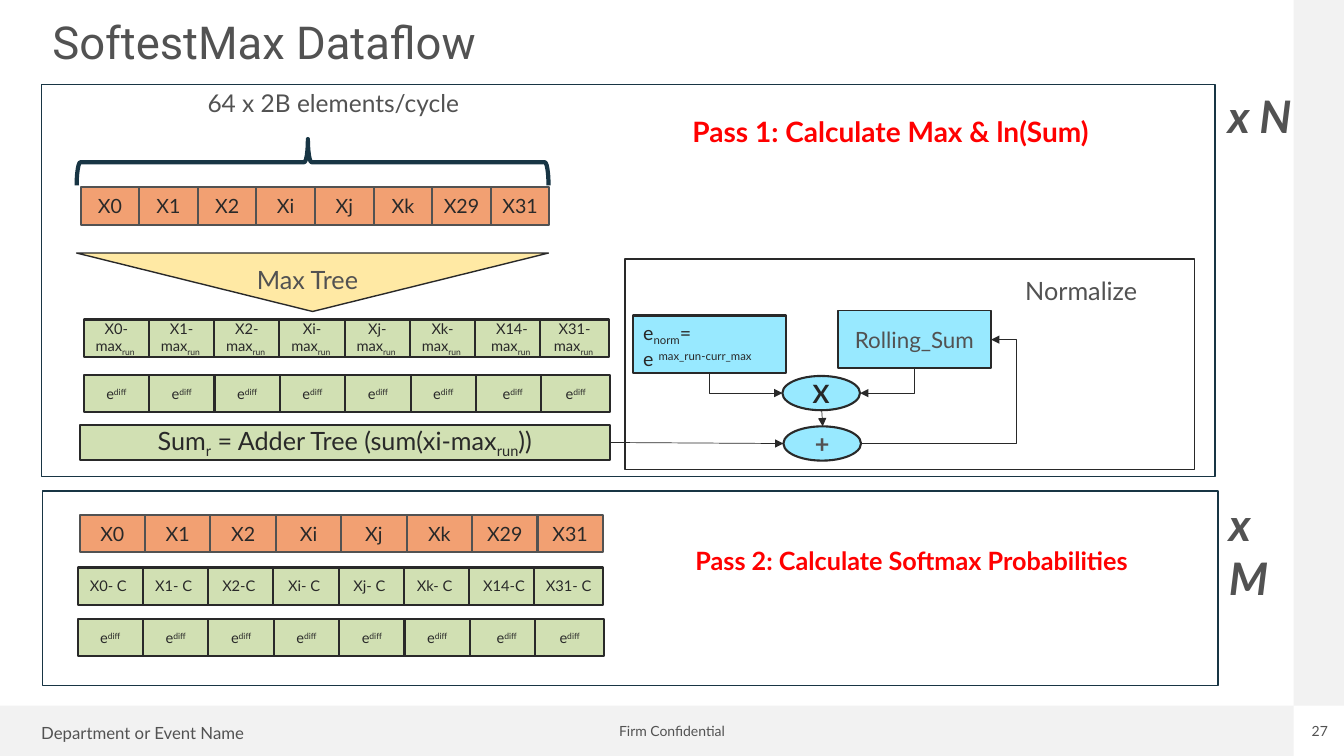
from lxml.etree import SubElement
from pptx import Presentation
from pptx.dml.color import RGBColor
from pptx.enum.shapes import MSO_CONNECTOR as CON, MSO_SHAPE as SHP
from pptx.enum.text import MSO_ANCHOR as ANC, MSO_AUTO_SIZE as FIT, PP_ALIGN as AL
from pptx.oxml.ns import qn
from pptx.util import Emu, Pt

PX = 9144  # 100 px to the inch
GREY = RGBColor(0x52, 0x52, 0x52)
INK = RGBColor(0x29, 0x29, 0x29)
COAL = RGBColor(0x26, 0x26, 0x26)
NAVY = RGBColor(0x18, 0x35, 0x44)
RED = RGBColor(0xFF, 0x00, 0x00)
PALE = RGBColor(0xF2, 0xF2, 0xF2)
CORAL = RGBColor(0xF2, 0xA0, 0x72)
GREEN = RGBColor(0xD1, 0xE0, 0xB3)
BLUE = RGBColor(0x98, 0xE9, 0xFF)
CREAM = RGBColor(0xFF, 0xE9, 0xA4)

HEADS = ["X0", "X1", "X2", "Xi", "Xj", "Xk", "X29", "X31"]
TERMS = HEADS[:6] + ["X14", "X31"]
LOWER, RAISE = "↓", "↑"
BASE = {LOWER: "-25000", RAISE: "30000"}


def emu(*vals):
    return [Emu(round(v * PX)) for v in vals]


def place(org, box):
    x, y, w, h = box
    return emu(org[0] + x, org[1] + y, w, h)


def write(frame, text, size, color=GREY, align=AL.LEFT, name="Lato", **fmt):
    """Fill a frame; | splits runs, and a leading arrow lowers or raises one."""
    for i, part in enumerate(text.split("\n")):
        para = frame.paragraphs[0] if i == 0 else frame.add_paragraph()
        para.alignment = align
        for bit in part.split("|"):
            run = para.add_run()
            run.text = bit.lstrip(LOWER + RAISE)
            look = {"size": Pt(size), "name": name, **fmt}
            for key, val in look.items():
                setattr(run.font, key, val)
            run.font.color.rgb = color
            if bit[0] in BASE:
                run._r.get_or_add_rPr().set("baseline", BASE[bit[0]])


def shape(tree, org, box, kind=SHP.RECTANGLE, fill=None, line=None, wide=1):
    shp = tree.add_shape(kind, *place(org, box))
    shp.shadow.inherit = False
    if fill is None:
        shp.fill.background()
    else:
        shp.fill.solid()
        shp.fill.fore_color.rgb = fill
    if line is None:
        shp.line.fill.background()
    else:
        shp.line.color.rgb = line
        shp.line.width = Pt(wide)
    return shp


def node(tree, org, box, text, size, color=INK, kind=SHP.RECTANGLE,
         fill=GREEN, line=INK, wide=1.5, anchor=ANC.MIDDLE, align=AL.CENTER, **fmt):
    """A filled shape with text."""
    frame = shape(tree, org, box, kind, fill, line, wide).text_frame
    frame.word_wrap = True
    frame.vertical_anchor = anchor
    write(frame, text, size, color, align, **fmt)


def label(tree, org, box, text, size, wrap=True, inset=True, **fmt):
    frame = tree.add_textbox(*place(org, box)).text_frame
    frame.word_wrap = wrap
    if not wrap:
        frame.auto_size = FIT.SHAPE_TO_FIT_TEXT
    if not inset:
        for side in ("left", "right", "top", "bottom"):
            setattr(frame, "margin_" + side, 0)
    write(frame, text, size, **fmt)
    return frame


def row(tree, org, box, texts, size, wide=None, last=None, **look):
    """Cells at an equal pitch; the last two may be wider than it."""
    x, y, w, h = box
    count = len(texts)
    step = (w - last) / (count - 1) if last else w / count
    sizes = [step] * (count - 2) + [wide or step, last or step]
    cells = tree.add_group_shape().shapes
    for i, (text, width) in enumerate(zip(texts, sizes)):
        node(cells, org, (x + i * step, y, width, h), text, size, **look)


def heads(tree, org, box):
    row(tree, org, box, HEADS, 14, fill=CORAL, line=GREY, wide=None)


def terms(tree, org, box, texts):
    row(tree, org, box, texts, 10.5, wide=73, last=68)


def arrow(tree, org, start, end, kind=CON.STRAIGHT, wide=0.5):
    ends = [o + v for o, v in zip(org * 2, start + end)]
    con = tree.add_connector(kind, *emu(*ends))
    con.line.color.rgb = INK
    con.line.width = Pt(wide)
    SubElement(con.line._get_or_add_ln(), qn("a:tailEnd"), type="triangle")
    props = con._element.spPr
    SubElement(props, qn("a:effectLst"))
    return props


def drop(tree, org, start, end):
    """An arrow that goes down, then turns sideways."""
    (x1, y1), (x2, y2) = start, end
    mx, my = (x1 + x2) / 2, (y1 + y2) / 2
    dx, dy = abs(y2 - y1) / 2, abs(x2 - x1) / 2
    props = arrow(tree, org, (mx - dx, my - dy), (mx + dx, my + dy), CON.ELBOW)
    props.find(qn("a:prstGeom")).set("prst", "bentConnector2")
    turn = {"rot": "16200000", "flipH": "1"} if x2 > x1 else {"rot": "5400000"}
    for key, val in turn.items():
        props.find(qn("a:xfrm")).set(key, val)


def loop(tree, org, start, end, bend):
    props = arrow(tree, org, start, end, CON.ELBOW, 1)
    geom = props.find(qn("a:prstGeom"))
    guides = geom.find(qn("a:avLst"))
    if guides is None:
        guides = SubElement(geom, qn("a:avLst"))
    SubElement(guides, qn("a:gd"), name="adj1", fmla=f"val {bend}")


def norm(tree, org, size):
    shape(tree, org, (0, 0, *size), line=INK)
    label(tree, org, (387, 11, 154, 40), "Normalize", 18)
    node(tree, org, (8, 56, 152, 57), "e|↓norm|=\ne |↑max_run-curr_max", 14,
         fill=BLUE, anchor=ANC.TOP, align=AL.LEFT)
    node(tree, org, (211, 51, 152, 57), "Rolling_Sum", 16, GREY, fill=BLUE, wide=1)
    for x, y, sign, color in ((156, 116, "X", COAL), (157, 166, "+", GREY)):
        node(tree, org, (x, y, 77, 34), sign, 18, color, SHP.OVAL, BLUE, bold=True)
    loop(tree, org, (234, 183), (363, 80), 119500)
    drop(tree, org, (84, 113), (156, 133))
    drop(tree, org, (287, 108), (233, 133))
    arrow(tree, org, (195, 150), (196, 166))


def first(tree, org, size):
    shape(tree, org, (0, 0, *size), line=NAVY)
    para = label(tree, org, (155, 6, 309, 46), "64 x 2B elements/cycle", 17.5).paragraphs[0]
    for key, val in {"line_spacing": 0.7, "space_before": Pt(10)}.items():
        setattr(para, key, val)
    heads(tree, org, (39, 102, 465, 37))
    brace = shape(tree, org, (246, -157, 46, 468), SHP.LEFT_BRACE, line=NAVY, wide=3)
    brace.rotation = 90
    brace.adjustments[0], brace.adjustments[1] = 0.08, 0.51
    tri = shape(tree, org, (35, 167, 468, 58), SHP.ISOSCELES_TRIANGLE, CREAM, INK)
    tri.rotation = 180
    label(tree, org, (204, 173, 166, 40), "Max Tree", 18)
    terms(tree, org, (42, 233, 521, 37), [f"{t}- max|↓run " for t in TERMS])
    terms(tree, org, (42, 288, 522, 37), ["e|↑diff"] * 8)
    node(tree, org, (38, 338, 526, 34), "Sum|↓r| = Adder Tree (sum(xi-max|↓run|))", 18)
    label(tree, org, (636, 25, 497, 44), "Pass 1: Calculate Max & ln(Sum)", 20,
          color=RED, bold=True)
    label(tree, org, (1167, -1, 86, 64), "x N", 32, wrap=False, bold=True, italic=True)
    norm(tree, (org[0] + 579, org[1] + 173), (565, 209))
    arrow(tree, org, (564, 355), (736, 356))


def second(tree, org, size):
    shape(tree, org, (0, 0, *size), line=NAVY)
    heads(tree, org, (37, 24, 519, 37))
    tight = ("X2", "X14")
    terms(tree, org, (35, 76, 521, 37),
          [t + ("-C " if t in tight else "- C ") for t in TERMS])
    terms(tree, org, (35, 127, 522, 37), ["e|↑diff"] * 8)
    label(tree, org, (638, 49, 490, 40), "Pass 2: Calculate Softmax Probabilities", 18,
          color=RED, bold=True)
    label(tree, org, (1167, 1, 90, 64), "x M", 32, wrap=False, bold=True, italic=True)


def margin(tree, org, size):
    """The grey bands along the bottom and the right side."""
    w, h = size
    shape(tree, org, (0, h - 50, w - 50, 50), fill=PALE)
    shape(tree, org, (w - 50, 0, 50, h - 50), fill=PALE)
    label(tree, org, (600, h - 38, 133, 27), "Firm Confidential", 10, wrap=False,
          align=AL.CENTER)
    label(tree, org, (31, h - 38, 238, 30), "Department or Event Name", 12, wrap=False)
    label(tree, org, (w - 33, h - 33, 18, 17), "27", 10, wrap=False, inset=False,
          align=AL.CENTER)


def title(head, box):
    for key, val in zip(("left", "top", "width", "height"), emu(*box)):
        setattr(head, key, val)
    frame = head.text_frame
    look = {"auto_size": FIT.NONE, "vertical_anchor": ANC.MIDDLE, "word_wrap": True}
    for key, val in look.items():
        setattr(frame, key, val)
    write(frame, "SoftestMax Dataflow", 32.4, name="Roboto")
    frame.paragraphs[0].line_spacing = 0.9


def main():
    prs = Presentation()
    prs.slide_width, prs.slide_height = emu(1333, 750)
    slide = prs.slides.add_slide(prs.slide_layouts[5])
    tree = slide.shapes
    margin(tree, (0, 0), (1333, 750))
    title(tree.title, (42, 24, 1200, 40))
    first(tree, (41, 84), (1164, 389))
    second(tree, (42, 487), (1166, 193))
    prs.save("out.pptx")


if __name__ == "__main__":
    main()
